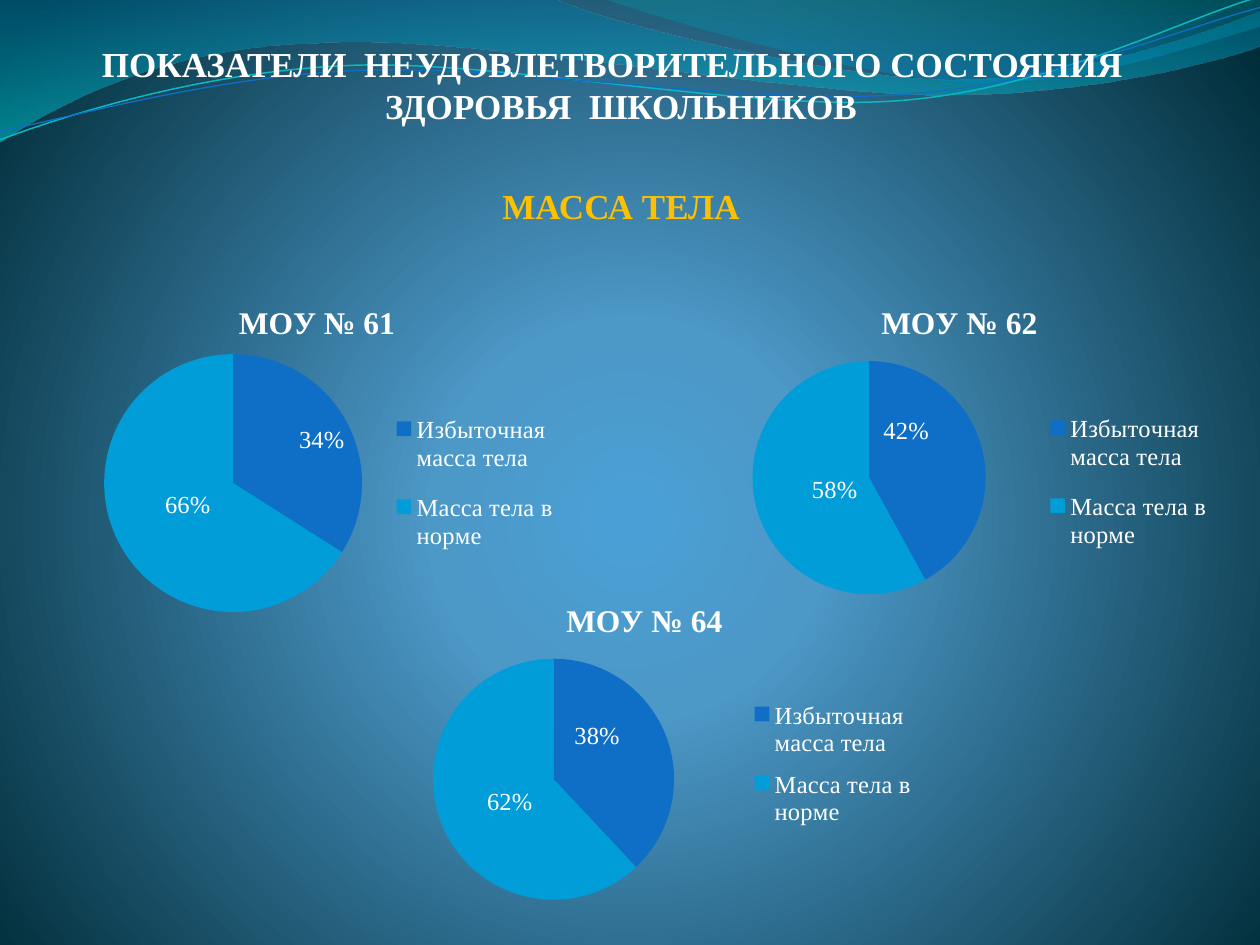
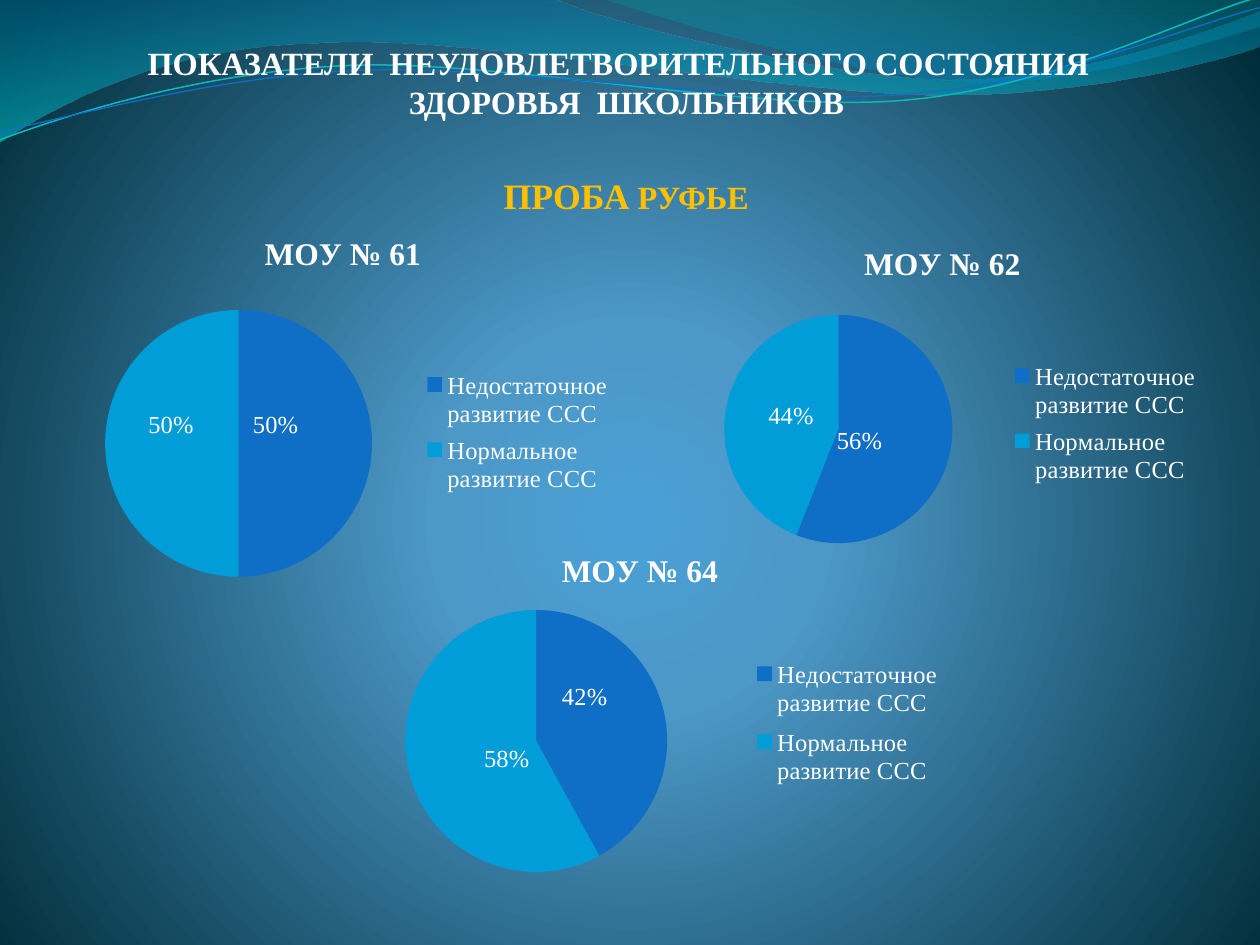
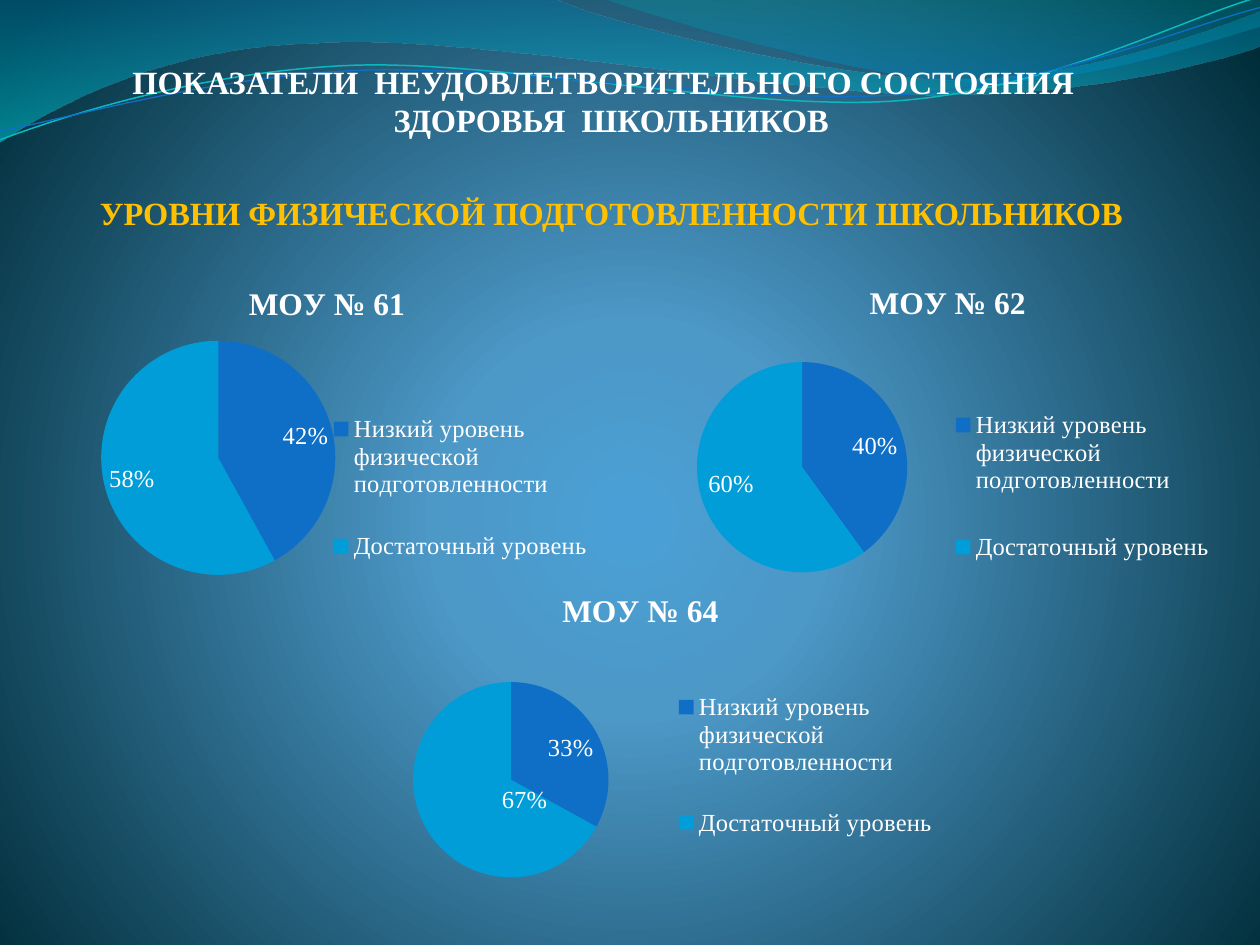
from math import cos, pi, sin

from lxml.etree import SubElement
from pptx import Presentation
from pptx.chart.data import CategoryChartData
from pptx.dml.color import RGBColor
from pptx.enum.chart import XL_CHART_TYPE, XL_LABEL_POSITION, XL_LEGEND_POSITION
from pptx.enum.text import PP_ALIGN
from pptx.oxml import parse_xml
from pptx.oxml.ns import nsdecls, qn
from pptx.util import Cm, Pt

FONT = "Times New Roman"
WHITE, GOLD = "FFFFFF", "FFC000"
SLICES = ("0F6FC6", "009DD9")
HEADING = "ПОКАЗАТЕЛИ  НЕУДОВЛЕТВОРИТЕЛЬНОГО СОСТОЯНИЯ   ЗДОРОВЬЯ  ШКОЛЬНИКОВ"
SCHOOLS = ("МОУ № 61", "МОУ № 62", "МОУ № 64")

# Stops are (position %, colour, opacity %)
BACKGROUND = [(0, "4AA0D6", 100), (25, "4C98C7", 100), (100, "002C38", 100)]

# Waves in inches: a start, then line ends (x, y) or Bezier curves (three points)
BANDS = [
    ((0, 0), [(4.4, -.01), (4.76, .17, 6.64, .63, 7.58, .63),
              (8.53, .63, 9.58, .26, 10, .09), (10.01, .36),
              (9.83, .44, 8.7, .76, 7.46, .75), (6.22, .75, 3.82, .28, 2.57, .34),
              (1.29, .36, .46, .83, -.01, 1.13)],
     [(0, "0074A1", 45), (100, "00C6CF", 55)]),
    ((4.79, -.01), [(5.09, .11, 6.82, .62, 7.69, .65),
                    (8.56, .69, 9.61, .32, 10, .21), (10, 0)],
     [(0, "00A1A9", 30), (80, "008BBF", 45)]),
]
STRANDS = [
    ((0, 1.11), [(.48, .93, 1.58, .57, 2.77, .52), (3.95, .47, 5.93, .89, 7.13, .8),
                 (8.33, .71, 9.38, .15, 9.98, -.02)], "0AB8BF", .85),
    ((0, 1.04), [(.47, .96, 1.64, .61, 2.83, .56), (4.03, .51, 5.97, .84, 7.17, .75),
                 (8.36, .67, 9.41, .21, 10, .06)], "0F6FC6", .75),
]

# All places are in cm on the slide. Each chart: first share in %, frame,
# pie (left, top, diameter), legend box, centres of the two labels.
SLIDES = [
    dict(box=(1.7, .74, 21.82, 4.8), size=20, topic=[("МАССА ТЕЛА", 20)],
         cats=("Избыточная масса тела", "Масса тела в норме"),
         charts=[
             (34, (.89, 5.72, 11, 7.59), (2.1, 7.14, 5.2),
              (7.82, 7.94, 3.5, 3.6), [(6.49, 8.87), (3.79, 10.18)]),
             (42, (13.69, 5.72, 11.3, 6.6), (15.17, 7.28, 4.7),
              (21, 7.92, 3.5, 3.6), [(18.27, 8.69), (16.83, 9.88)]),
             (38, (7.29, 11.73, 11.4, 6.76), (8.73, 13.28, 4.86),
              (15.04, 13.87, 3.5, 3.06), [(12.04, 14.84), (10.28, 16.17)])]),
    dict(box=(1.5, .74, 22.43, 3.2), size=18.5, topic=[("ПРОБА", 20.4), (" РУФЬЕ", 18.5)],
         cats=("Недостаточное развитие ССС", "Нормальное развитие ССС"),
         charts=[
             (50, (.71, 4.32, 12.4, 8), (2.12, 6.25, 5.38),
              (8.43, 7.3, 4, 2.84), [(5.56, 8.57), (3.45, 8.57)]),
             (56, (12.9, 4.52, 12.19, 7.19), (14.6, 6.35, 4.6),
              (20.28, 7.12, 4, 2.84), [(17.33, 8.89), (15.95, 8.39)]),
             (42, (6.5, 10.72, 12.8, 7.19), (8.17, 12.3, 5.28),
              (15.08, 13.08, 4, 3), [(11.79, 14.05), (10.22, 15.3)])]),
    dict(box=(1.5, 1.12, 21.82, 4.19), size=18.5,
         topic=[("УРОВНИ ФИЗИЧЕСКОЙ ПОДГОТОВЛЕННОСТИ ШКОЛЬНИКОВ", 18.5)],
         cats=("Низкий уровень физической подготовленности", "Достаточный уровень"),
         charts=[
             (42, (1.09, 5.33, 11, 7.19), (2.04, 6.87, 4.72),
              (6.75, 7.68, 5.3, 4.3), [(6.16, 8.79), (2.66, 9.66)]),
             (40, (13.11, 5.33, 11.99, 6.81), (14.05, 7.3, 4.24),
              (19.12, 7.5, 5.4, 4.6), [(17.64, 8.99), (14.74, 9.76)]),
             (33, (6.71, 11.53, 12.4, 6.6), (8.33, 13.75, 3.94),
              (13.54, 13.32, 5.4, 4.2), [(11.51, 15.08), (10.58, 16.13)])]),
]


def rgb(code):
    return RGBColor.from_string(code)


def style(font, size, color=WHITE, bold=False):
    font.name, font.size, font.bold = FONT, Pt(size), bold
    font.color.rgb = rgb(color)


def set_gradient(fill, element, stops, direction):
    fill.gradient()
    grad = element.find(".//" + qn("a:gradFill"))
    for child in list(grad):
        grad.remove(child)
    stop_list = SubElement(grad, qn("a:gsLst"))
    for position, color, opacity in stops:
        stop = SubElement(stop_list, qn("a:gs"), pos=str(position * 1000))
        clr = SubElement(stop, qn("a:srgbClr"), val=color)
        if opacity < 100:
            SubElement(clr, qn("a:alpha"), val=str(opacity * 1000))
    grad.append(parse_xml(direction))


def add_wave(s, layout, start, segments, close):
    """Draw on a slide, then move the outline to the layout that all slides share."""
    points = [start] + [seg[i:i + 2] for seg in segments for i in range(0, len(seg), 2)]
    points = [(Cm(x * 2.54), Cm(y * 2.54)) for x, y in points]
    builder = s.shapes.build_freeform(*points[0], scale=1.0)
    builder.add_line_segments(points[1:], close=close)
    sp = builder.convert_to_shape()
    sp.shadow.inherit = False
    lines = sp.element.iter(qn("a:lnTo"))
    bend(list(lines), segments)
    layout.element.cSld.spTree.append(sp.element)
    return sp


def bend(lines, segments):
    """Join the three lines through the points of each curve into one Bezier."""
    rest = iter(lines)
    for seg in segments:
        first = next(rest)
        if len(seg) == 2:
            continue
        curve = parse_xml(f'<a:cubicBezTo {nsdecls("a")}/>')
        first.addprevious(curve)
        for line in (first, next(rest), next(rest)):
            curve.append(line[0])
            line.getparent().remove(line)


def decorate(layout, s):
    for placeholder in list(layout.placeholders):
        layout.element.cSld.spTree.remove(placeholder.element)
    set_gradient(layout.background.fill, layout.element, BACKGROUND,
                 f'<a:path {nsdecls("a")} path="circle">'
                 '<a:fillToRect l="10000" t="110000" r="10000" b="100000"/></a:path>')
    for start, segments, stops in BANDS:
        sp = add_wave(s, layout, start, segments, True)
        set_gradient(sp.fill, sp.element, stops,
                     f'<a:lin {nsdecls("a")} ang="5400000" scaled="1"/>')
        sp.line.fill.background()
    for start, segments, color, width in STRANDS:
        sp = add_wave(s, layout, start, segments, False)
        sp.fill.background()
        sp.line.color.rgb = rgb(color)
        sp.line.width = Pt(width)


def add_heading(s, box, size, topic):
    tf = s.shapes.add_textbox(*map(Cm, box)).text_frame
    tf.word_wrap = True
    tf.margin_left, tf.margin_right = 0, Cm(.18)
    tf.text = HEADING
    style(tf.paragraphs[0].runs[0].font, size, bold=True)
    p = tf.add_paragraph()
    p.space_before = Pt(size * 1.65)
    for text, run_size in topic:
        r = p.add_run()
        r.text = text
        style(r.font, run_size, GOLD, True)
    for p in tf.paragraphs:
        p.alignment = PP_ALIGN.CENTER


def manual_layout(x, y, w=None, h=None, inner=False):
    """A c:layout element; without a size, x and y shift the default place."""
    parts = [("layoutTarget", "inner")] if inner else []
    if w is not None:
        parts += [("xMode", "edge"), ("yMode", "edge")]
    parts += [(n, f"{v:.4f}") for n, v in zip("xywh", (x, y, w, h)) if v is not None]
    body = "".join(f'<c:{name} val="{value}"/>' for name, value in parts)
    return parse_xml(f'<c:layout {nsdecls("c")}><c:manualLayout>{body}'
                     '</c:manualLayout></c:layout>')


def add_pie(s, title, cats, share, frame, pie, legend_box, label_centres):
    left, top, width, height = frame

    def within(x, y, w, h):
        return (x - left) / width, (y - top) / height, w / width, h / height

    data = CategoryChartData()
    data.categories = cats
    data.add_series("Series 1", (share, 100 - share))
    chart = s.shapes.add_chart(XL_CHART_TYPE.PIE, *map(Cm, frame), data).chart
    style(chart.font, 14)
    chart.element.find(qn("c:chart")).addnext(parse_xml(
        f'<c:spPr {nsdecls("c", "a")}><a:noFill/><a:ln><a:noFill/></a:ln></c:spPr>'))

    chart.has_title = True
    tf = chart.chart_title.text_frame
    tf.text = title
    style(tf.paragraphs[0].runs[0].font, 18, bold=True)

    chart.has_legend = True
    legend = chart.legend
    legend.position = XL_LEGEND_POSITION.RIGHT
    legend.include_in_layout = False
    style(legend.font, 14)
    overlay = chart.element.find(".//" + qn("c:legend")).find(qn("c:overlay"))
    overlay.addprevious(manual_layout(*within(*legend_box)))

    pie_x, pie_y, diameter = pie
    area = chart.element.find(".//" + qn("c:plotArea"))
    for old in area.findall(qn("c:layout")):
        area.remove(old)
    area.insert(0, manual_layout(*within(pie_x, pie_y, diameter, diameter), inner=True))

    plot = chart.plots[0]
    plot.vary_by_categories = True
    series = plot.series[0]
    labels = series.data_labels
    labels.show_value, labels.show_percentage = False, True
    labels.number_format, labels.number_format_is_linked = "0%", False
    style(labels.font, 14)
    for i, color in enumerate(SLICES):
        point = series.points[i]
        point.format.fill.solid()
        point.format.fill.fore_color.rgb = rgb(color)
        point.format.line.fill.background()
        style(point.data_label.font, 14)
        point.data_label.position = XL_LABEL_POSITION.CENTER

    # A centred label lies half a radius out, on the middle of its slice
    middles = (share / 100 * pi, (1 + share / 100) * pi)
    for dlbl, angle, (x, y) in zip(chart.element.iter(qn("c:dLbl")), middles, label_centres):
        dx = x - (pie_x + diameter / 2 + diameter / 4 * sin(angle))
        dy = y - (pie_y + diameter / 2 - diameter / 4 * cos(angle))
        dlbl.insert(1, manual_layout(dx / width, dy / height))
        dlbl.find(qn("c:showVal")).set("val", "0")
        dlbl.find(qn("c:showPercent")).set("val", "1")


def main():
    prs = Presentation()
    prs.slide_width, prs.slide_height = Cm(25.4), Cm(19.05)
    blank = prs.slide_layouts[6]
    for number, content in enumerate(SLIDES):
        s = prs.slides.add_slide(blank)
        if number == 0:
            decorate(blank, s)
        add_heading(s, content["box"], content["size"], content["topic"])
        for school, chart in zip(SCHOOLS, content["charts"]):
            add_pie(s, school, content["cats"], *chart)
    prs.save("out.pptx")


if __name__ == "__main__":
    main()
